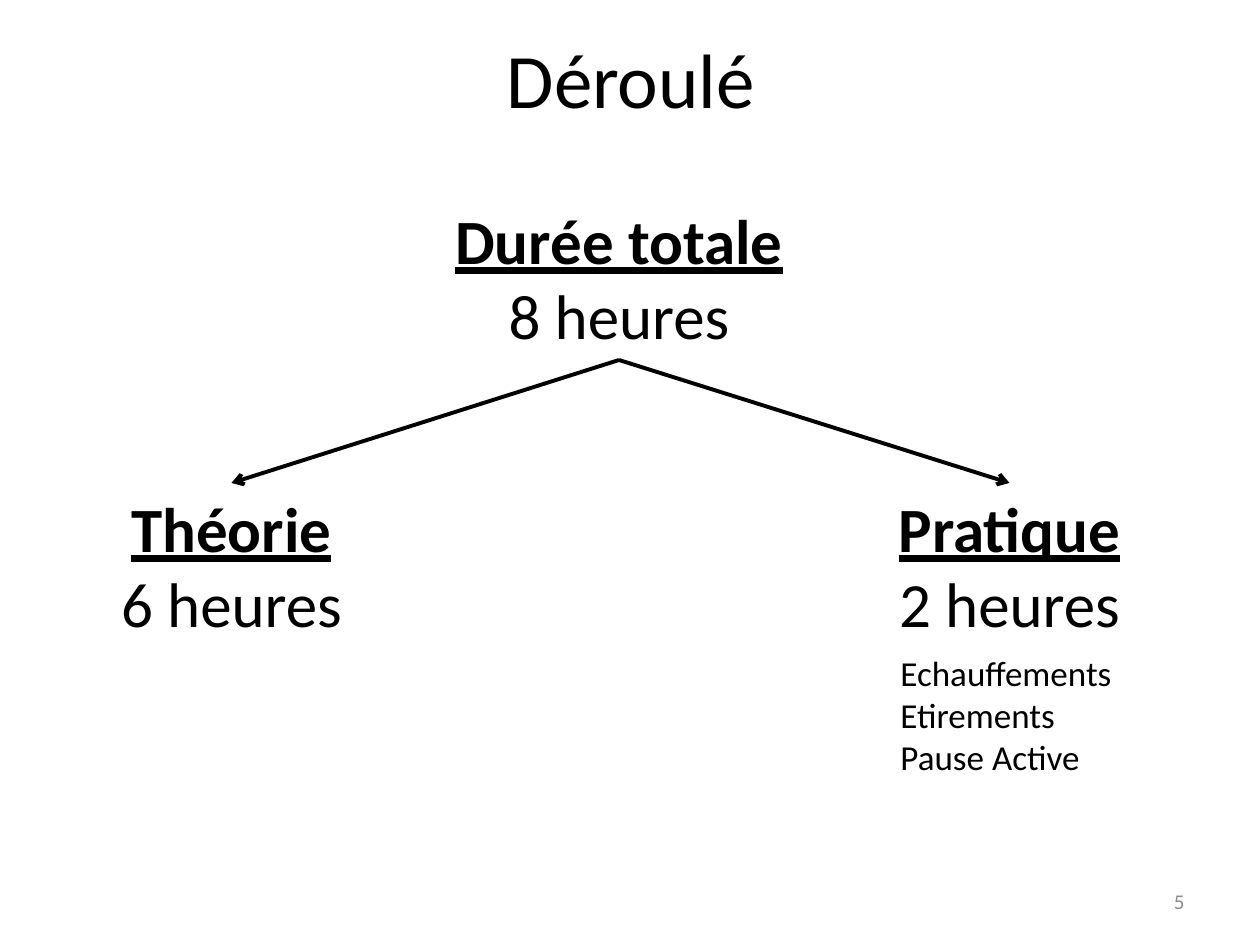
from lxml import etree
from pptx import Presentation
from pptx import util as u
from pptx.dml.color import RGBColor
from pptx.enum import shapes, text
from pptx.oxml.ns import qn

BLACK = RGBColor(0x00, 0x00, 0x00)
GREY = RGBColor(0x8C, 0x8C, 0x8C)
FONT = "Calibri"
PX_PER_INCH = 126
LEFT, CENTER, RIGHT = text.PP_ALIGN.LEFT, text.PP_ALIGN.CENTER, text.PP_ALIGN.RIGHT
TOP, MIDDLE = text.MSO_ANCHOR.TOP, text.MSO_ANCHOR.MIDDLE

# Content: boxes are left, top, width, height in px
TITLE = ("Déroulé", (64, 0, 1134, 155))
TOTAL = ("Durée totale", "8 heures", (282, 195, 674, 165))
PARTS = [
    ("Théorie", "6 heures", (32, 483, 399, 165)),
    ("Pratique", "2 heures", (799, 483, 421, 165)),
]
# \v is a line break inside the paragraph
EXERCISES = (["Echauffements", "Etirements\vPause Active"], (888, 645, 243, 140))
PAGE = ("5", (903, 876, 294, 50))


def px(n):
    return u.Emu(round(n * 914400 / PX_PER_INCH))


def add_text(slide, lines, box, size, align=CENTER, anchor=TOP, color=BLACK):
    label = slide.shapes.add_textbox(*map(px, box))
    frame = label.text_frame
    frame.word_wrap = True
    frame.vertical_anchor = anchor
    frame.text = "\n".join(lines)
    for paragraph in frame.paragraphs:
        paragraph.alignment = align
        for run in paragraph.runs:
            run.font.name = FONT
            run.font.size = u.Pt(size)
            run.font.color.rgb = color
    return label


def add_duration(slide, heading, hours, box):
    label = add_text(slide, [heading, hours], box, 36)
    heading_font = label.text_frame.paragraphs[0].runs[0].font
    heading_font.bold = heading_font.underline = True
    return label


def add_arrow(slide, start, end):
    arrow = slide.shapes.add_connector(shapes.MSO_CONNECTOR.STRAIGHT, 0, 0, 0, 0)
    arrow.begin_connect(start, 2)
    arrow.end_connect(end, 0)
    arrow.line.color.rgb = BLACK
    arrow.line.width = u.Pt(2.25)
    etree.SubElement(arrow.line._get_or_add_ln(), qn("a:tailEnd"), type="arrow")
    etree.SubElement(arrow._element.spPr, qn("a:effectLst"))


def main():
    prs = Presentation()
    prs.slide_width, prs.slide_height = px(1260), px(945)
    slide = prs.slides.add_slide(prs.slide_layouts[6])

    # Title and page number
    title, title_box = TITLE
    add_text(slide, [title], title_box, 44, anchor=MIDDLE)
    page, page_box = PAGE
    add_text(slide, [page], page_box, 12, RIGHT, MIDDLE, GREY)

    # Total duration, split into its parts
    total = add_duration(slide, *TOTAL)
    for part in PARTS:
        add_arrow(slide, total, add_duration(slide, *part))

    # Exercises of the practical part
    exercises, exercises_box = EXERCISES
    add_text(slide, exercises, exercises_box, 20, LEFT)

    prs.save("out.pptx")


if __name__ == "__main__":
    main()
